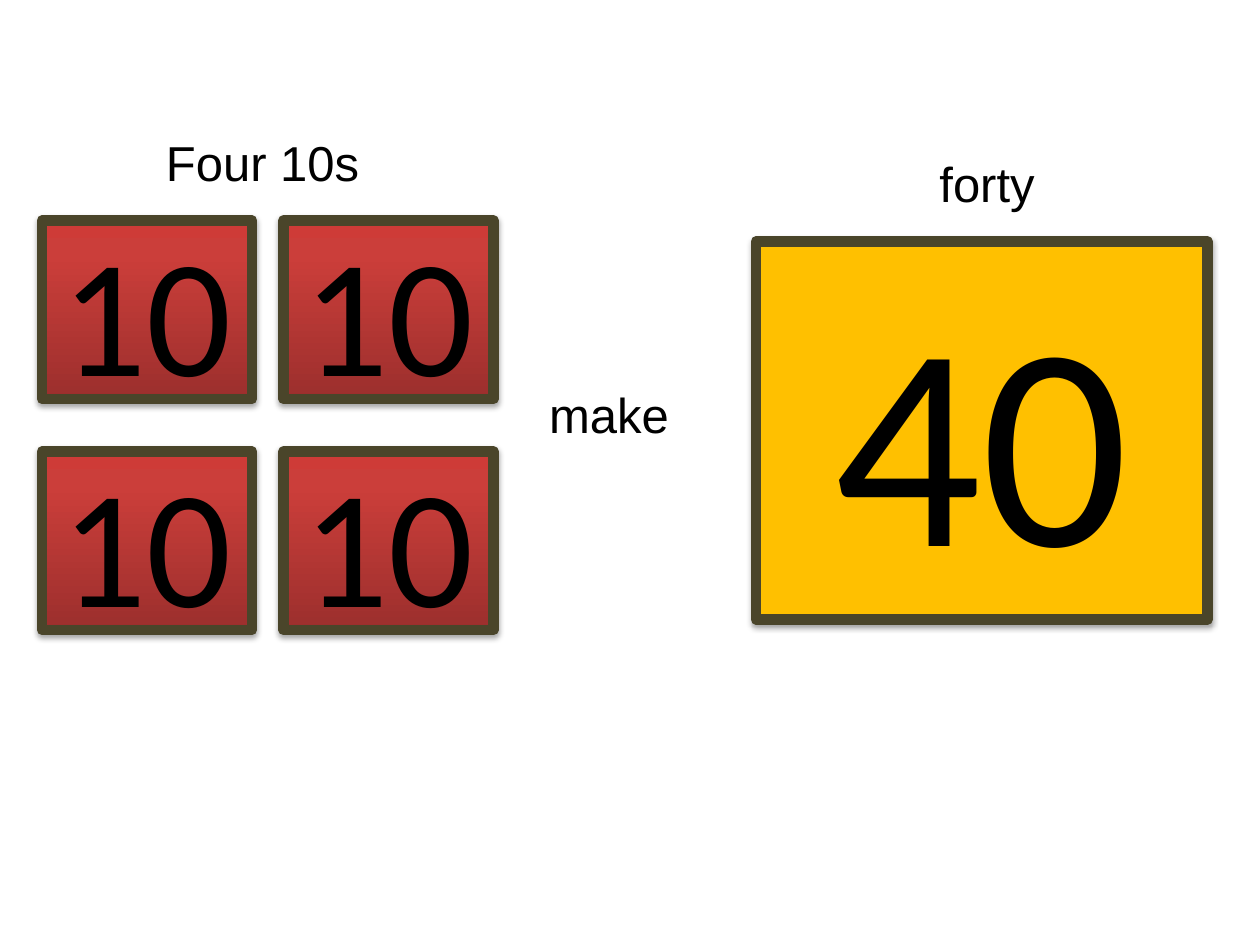
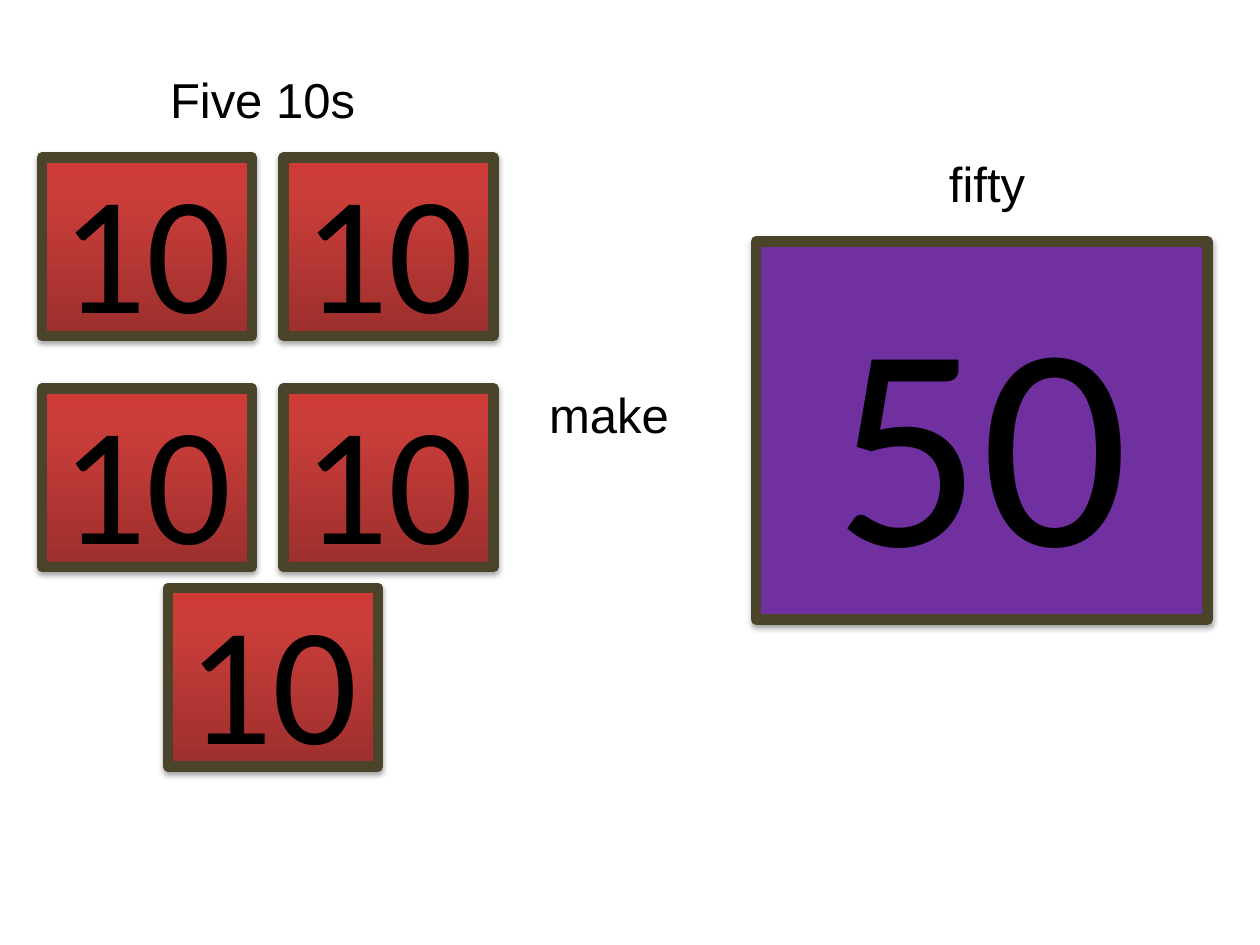
import dataclasses

import pptx
import pptx.dml.color
import pptx.enum.shapes
import pptx.enum.text
import pptx.oxml
import pptx.oxml.ns
import pptx.util

SCALE = 7620


@dataclasses.dataclass(frozen=True)
class Theme:
    """Hold the colours, fonts and sizes that the slides share."""

    ink: str = "000000"
    edge: str = "4A452A"
    paper: str = "FFFFFF"
    amber: str = "FFC000"
    purple: str = "7030A0"
    reds: tuple = ((0, "9C2F2D"), (80, "CB3E3A"), (100, "CE3B37"))
    body: str = "Arial"
    digit: str = "Calibri"
    small: int = 28
    medium: int = 96
    large: int = 166
    border: int = 6


THEME = Theme()


def px(*lengths):
    """Turn lengths in px into EMU."""
    return [pptx.util.Emu(length * SCALE) for length in lengths]


def rgb(code):
    """Turn a hex code into a colour."""
    return pptx.dml.color.RGBColor.from_string(code)


def write(frame, text, face, size):
    """Write one centred run in a text frame."""
    frame.word_wrap = True
    line = frame.paragraphs[0]
    line.alignment = pptx.enum.text.PP_ALIGN.CENTER
    run = line.add_run()
    run.text = text
    run.font.name = face
    run.font.size = pptx.util.Pt(size)
    run.font.color.rgb = rgb(THEME.ink)


def label(slide, left, top, text):
    """Add a caption that grows with its text."""
    frame = slide.shapes.add_textbox(*px(left, top, 320, 68)).text_frame
    write(frame, text, THEME.body, THEME.small)
    frame.auto_size = pptx.enum.text.MSO_AUTO_SIZE.SHAPE_TO_FIT_TEXT


def shade(shape, stops):
    """Fill a shape with a gradient that rises from its foot."""
    marks = "".join(
        f'<a:gs pos="{spot * 1000}"><a:srgbClr val="{code}"/></a:gs>'
        for spot, code in stops
    )
    fill = pptx.oxml.parse_xml(
        f'<a:gradFill {pptx.oxml.ns.nsdecls("a")} rotWithShape="1">'
        f'<a:gsLst>{marks}</a:gsLst><a:lin ang="16200000" scaled="0"/></a:gradFill>'
    )
    shape.element.spPr.insert(2, fill)


def drop(shape):
    """Give a shape a soft shadow below it."""
    shape.shadow.inherit = False
    glow = pptx.oxml.parse_xml(
        f'<a:outerShdw {pptx.oxml.ns.nsdecls("a")} blurRad="40000" dist="23000" '
        f'dir="5400000" rotWithShape="0"><a:srgbClr val="{THEME.ink}">'
        '<a:alpha val="35000"/></a:srgbClr></a:outerShdw>'
    )
    shape.element.spPr.find(pptx.oxml.ns.qn("a:effectLst")).append(glow)


def card(slide, box, text, size, fill):
    """Add a framed number card with a plain or graded fill."""
    kind = pptx.enum.shapes.MSO_SHAPE.RECTANGLE
    shape = slide.shapes.add_shape(kind, *px(*box))
    if isinstance(fill, str):
        shape.fill.solid()
        shape.fill.fore_color.rgb = rgb(fill)
    else:
        shade(shape, fill)
    shape.line.color.rgb = rgb(THEME.edge)
    shape.line.width = pptx.util.Pt(THEME.border)
    drop(shape)
    shape.text_frame.vertical_anchor = pptx.enum.text.MSO_ANCHOR.MIDDLE
    write(shape.text_frame, text, THEME.digit, size)


def tens(slide, left, top, title, count):
    """Place a caption and tens in two columns, with an odd one below."""
    wide, high = 200, 170
    label(slide, left + 50, top, title)
    for place in range(count):
        row, col = divmod(place, 2)
        across, down = col * (wide + 30), row * (high + 50)
        if place == count - 1 and count % 2:
            across, down = 120, down - 30
        box = (left + across, top + 90 + down, wide, high)
        card(slide, box, "10", THEME.medium, THEME.reds)


def total(slide, left, top, word, value, fill):
    """Place the number word above the large card."""
    label(slide, left + 60, top, word)
    card(slide, (left, top + 90, 430, 360), value, THEME.large, fill)


def build(deck, top, title, count, word, value, fill):
    """Add a slide that shows what a count of tens makes."""
    slide = deck.slides.add_slide(deck.slide_layouts[6])
    slide.background.fill.solid()
    slide.background.fill.fore_color.rgb = rgb(THEME.paper)
    tens(slide, 40, top, title, count)
    label(slide, 420, 360, "make")
    total(slide, 720, 140, word, value, fill)


def main():
    """Build and save the deck."""
    deck = pptx.Presentation()
    deck.slide_width, deck.slide_height = px(1200, 900)
    build(deck, 120, "Four 10s", 4, "forty", "40", THEME.amber)
    build(deck, 60, "Five 10s", 5, "fifty", "50", THEME.purple)
    deck.save("out.pptx")


if __name__ == "__main__":
    main()
